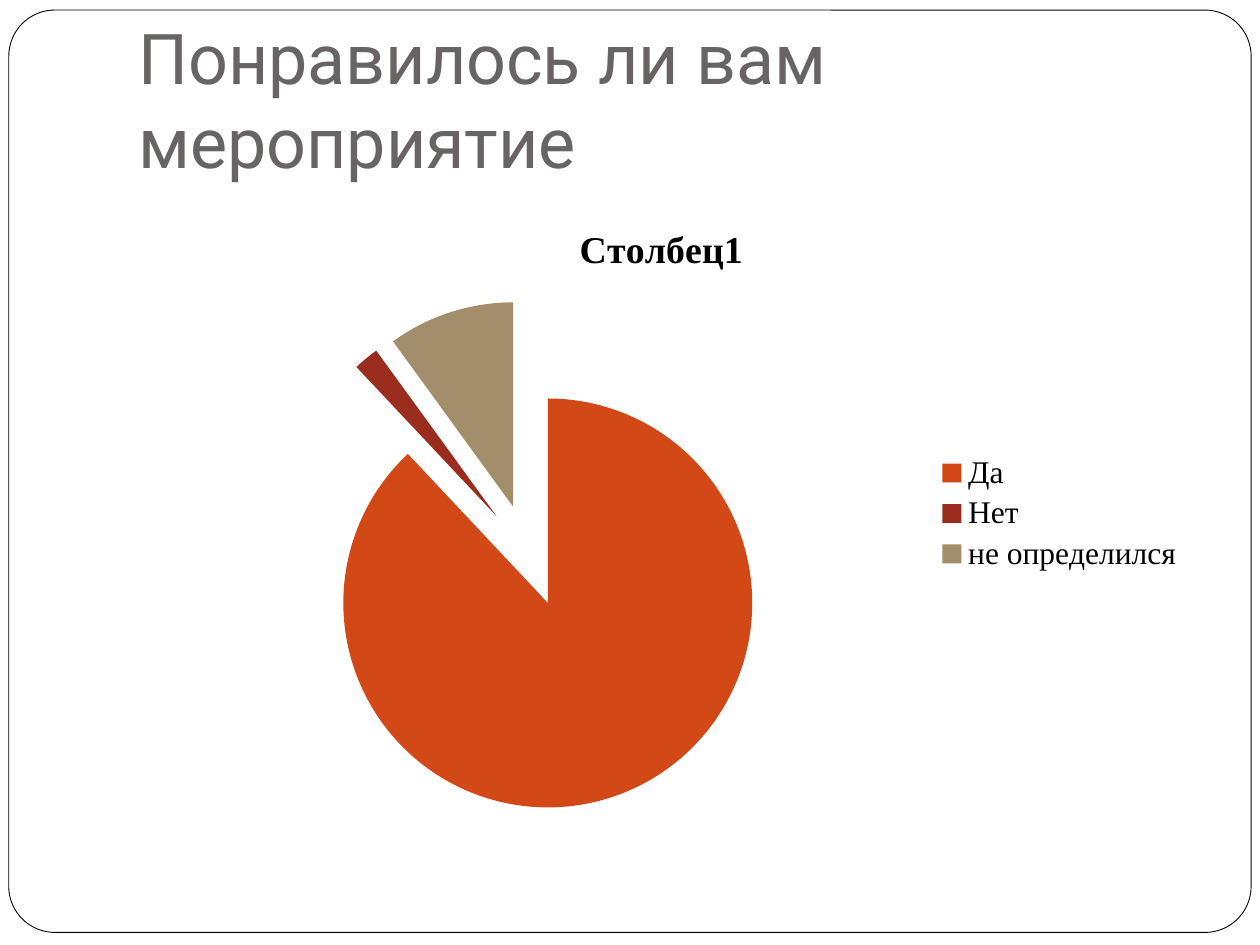
from dataclasses import dataclass

from lxml import etree
from pptx import Presentation
from pptx.chart.data import CategoryChartData
from pptx.dml.color import RGBColor
from pptx.enum.chart import XL_CHART_TYPE, XL_LEGEND_POSITION
from pptx.enum.shapes import MSO_SHAPE
from pptx.enum.text import MSO_ANCHOR, PP_ALIGN
from pptx.oxml.ns import qn
from pptx.util import Inches, Pt

PIE = XL_CHART_TYPE.PIE
RIGHT = XL_LEGEND_POSITION.RIGHT
ROUND = MSO_SHAPE.ROUNDED_RECTANGLE
BOTTOM = MSO_ANCHOR.BOTTOM
LEFT = PP_ALIGN.LEFT

WIDE, HIGH = 10, 7.5
COLORS = {
    "paper": "FFFFFF",
    "ink": "000000",
    "title": "696464",
    "yes": "D34817",
    "no": "9B2D1F",
    "unsure": "A28E6A",
}


@dataclass
class Box:
    left: float
    top: float
    width: float
    height: float

    def place(self) -> tuple:
        return tuple(map(Inches, (self.left, self.top, self.width, self.height)))


@dataclass
class Slice:
    label: str
    value: int
    color: str


SLICES = [
    Slice("Да", 88, "yes"),
    Slice("Нет", 2, "no"),
    Slice("не определился", 10, "unsure"),
]


def color(name: str) -> RGBColor:
    return RGBColor.from_string(COLORS[name])


def style(font, face: str, size: float, ink: str, bold: bool = False) -> None:
    font.name, font.size, font.bold = face, Pt(size), bold
    font.color.rgb = color(ink)


def draw_frame(slide, box: Box) -> None:
    frame = slide.shapes.add_shape(ROUND, *box.place())
    frame.adjustments[0] = 0.05
    frame.shadow.inherit = False
    frame.fill.solid()
    frame.fill.fore_color.rgb = color("paper")
    frame.line.color.rgb = color("ink")
    frame.line.width = Pt(0.5)


def draw_title(slide, box: Box, text: str) -> None:
    body = slide.shapes.add_textbox(*box.place()).text_frame
    body.word_wrap = True
    body.vertical_anchor = BOTTOM
    body.margin_bottom = Inches(0.1)
    body.text = text
    line = body.paragraphs[0]
    line.alignment = LEFT
    style(line.runs[0].font, "Roboto", 40, "title")


def draw_pie(slide, box: Box, name: str, slices: list[Slice], burst: int) -> None:
    data = CategoryChartData()
    data.categories = [s.label for s in slices]
    data.add_series(name, [s.value for s in slices])
    chart = slide.shapes.add_chart(PIE, *box.place(), data).chart
    style(chart.font, "Times New Roman", 18, "ink")

    # Heading and legend
    chart.has_title = True
    head = chart.chart_title.text_frame
    head.text = name
    style(head.paragraphs[0].runs[0].font, "Times New Roman", 21.6, "ink", True)
    chart.has_legend = True
    chart.legend.position = RIGHT
    chart.legend.include_in_layout = False

    # Slices pulled apart
    plot = chart.plots[0]
    plot.vary_by_categories = True
    series = plot.series[0]
    pull = etree.Element(qn("c:explosion"), val=str(burst))
    series._element.find(qn("c:tx")).addnext(pull)
    for i, s in enumerate(slices):
        fill = series.points[i].format.fill
        fill.solid()
        fill.fore_color.rgb = color(s.color)


def main() -> None:
    deck = Presentation()
    deck.slide_width, deck.slide_height = Inches(WIDE), Inches(HIGH)
    slide = deck.slides.add_slide(deck.slide_layouts[6])

    # Title and chart share one column
    left, width = 0.1 * WIDE, 0.85 * WIDE
    draw_frame(slide, Box(0.07, 0.08, WIDE - 0.14, 7.32))
    draw_title(slide, Box(left, 0.04 * HIGH, width, 1.25),
               "Понравилось ли вам мероприятие")
    draw_pie(slide, Box(left, 0.21 * HIGH, width, 5), "Столбец1", SLICES, 25)
    deck.save("out.pptx")


if __name__ == "__main__":
    main()
